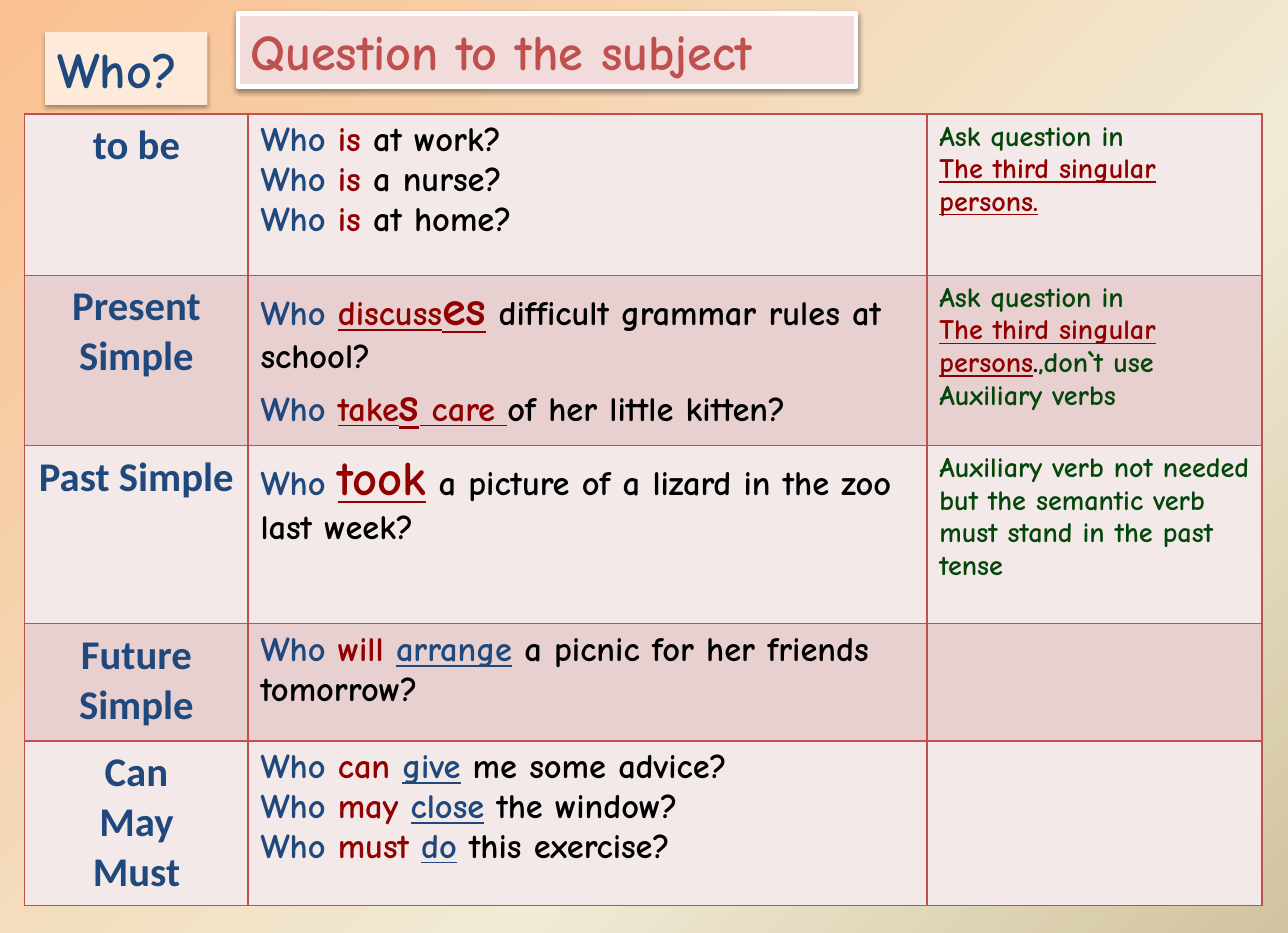
import copy
import dataclasses

import lxml.etree
import pptx
import pptx.dml.color
import pptx.enum.dml
import pptx.enum.shapes
import pptx.enum.text
import pptx.oxml.ns
import pptx.util

Inches = pptx.util.Inches
Pt = pptx.util.Pt
qn = pptx.oxml.ns.qn


@dataclasses.dataclass(frozen=True)
class Theme:
    hand: str = "Comic Neue"
    sans: str = "Calibri"
    navy: str = "1F497D"
    dark_red: str = "920000"
    green: str = "05470B"
    black: str = "000000"
    white: str = "FFFFFF"
    red: str = "C0504D"
    title_fill: str = "F2DCDB"
    who_fill: str = "FDEADA"
    bands: tuple = ("F4E9E9", "E8D0D0")
    backdrop: tuple = ((0, "FAC090"), (0.65, "F0EBD5"), (1, "D1C39F"))
    heading_size: int = 32
    ending_size: int = 31
    tense_size: int = 26
    example_size: int = 22
    note_size: int = 18


@dataclasses.dataclass(frozen=True)
class Look:
    size: int
    color: str
    font: str = Theme.hand
    underline: bool = False


THEME = Theme()
TITLE = Look(THEME.heading_size, THEME.red)
HEADING = Look(THEME.heading_size, THEME.navy)
TENSE = Look(THEME.tense_size, THEME.navy, THEME.sans)
WHO = Look(THEME.example_size, THEME.navy)
BASE_VERB = Look(THEME.example_size, THEME.navy, underline=True)
HELPER = Look(THEME.example_size, THEME.dark_red)
VERB = Look(THEME.example_size, THEME.dark_red, underline=True)
ENDING = Look(THEME.ending_size, THEME.dark_red, underline=True)
REST = Look(THEME.example_size, THEME.black)
NOTE = Look(THEME.note_size, THEME.green)
NOTE_KEY = Look(THEME.note_size, THEME.dark_red, underline=True)
NOTE_DOT = Look(THEME.note_size, THEME.black)


def rgb(value):
    return pptx.dml.color.RGBColor.from_string(value)


def ask(*spans):
    return [("Who ", WHO), *spans]


def ask_with_helper(helper, verb, rest):
    return ask((f"{helper} ", HELPER), (verb, BASE_VERB), (f" {rest}", REST))


ASK_IN = [("Ask question in", NOTE)]

# Each row: tense lines, example paragraphs, note paragraphs
ROWS = [
    (["to be"],
     [ask(("is ", HELPER), (rest, REST)) for rest in ("at work?", "a nurse?", "at home?")],
     [ASK_IN, [("The third singular persons.", NOTE_KEY)]]),
    (["Present Simple"],
     [ask(("discuss", VERB), ("es", ENDING), (" difficult grammar rules at school?", REST)),
      ask(("take", VERB), ("s", ENDING), (" care ", VERB), ("of her little kitten?", REST))],
     [ASK_IN, [("The third singular persons", NOTE_KEY), (".", NOTE_DOT),
               (",don`t use Auxiliary verbs", NOTE)]]),
    (["Past Simple"],
     [ask(("took", ENDING), (" a picture of a lizard in the zoo last week?", REST))],
     [[("Auxiliary verb not needed but the semantic verb must stand in the past tense", NOTE)]]),
    (["Future Simple"],
     [ask_with_helper("will", "arrange", "a picnic for her friends tomorrow?")],
     []),
    (["Can", "May", "Must"],
     [ask_with_helper("can", "give", "me some advice?"),
      ask_with_helper("may", "close", "the window?"),
      ask_with_helper("must", "do", "this exercise?")],
     []),
]
COLUMN_WIDTHS = (1.98, 6.02, 2.97)
ROW_HEIGHTS = (1.43, 1.51, 1.58, 1.04, 1.46)


class Sheet:
    def __init__(self, deck, theme):
        self.theme = theme
        self.page = deck.slides.add_slide(deck.slide_layouts[5])

    def backdrop(self):
        fill = self.page.background.fill
        fill.gradient()
        stops = self.page.element.find(".//" + qn("a:gsLst"))
        stops.append(copy.deepcopy(stops[-1]))
        for stop, (position, color) in zip(fill.gradient_stops, self.theme.backdrop):
            stop.position = position
            stop.color.rgb = rgb(color)
        fill.gradient_angle = 315

    def add_text(self, frame, paragraphs, align=pptx.enum.text.PP_ALIGN.LEFT):
        for number, spans in enumerate(paragraphs):
            para = frame.add_paragraph() if number else frame.paragraphs[0]
            para.alignment = align
            for text, look in spans:
                span = para.add_run()
                span.text = text
                span.font.name = look.font
                span.font.size = Pt(look.size)
                span.font.bold = True
                span.font.underline = look.underline
                span.font.color.rgb = rgb(look.color)

    def pad(self, holder):
        holder.margin_left = holder.margin_right = Inches(0.11)
        holder.margin_top = holder.margin_bottom = Inches(0.06)

    def shadow(self, box, opacity, distance):
        box.shadow.inherit = False
        effects = box.element.spPr.find(qn("a:effectLst"))
        outer = lxml.etree.SubElement(
            effects, qn("a:outerShdw"), blurRad=str(Pt(3.1)), dist=str(Pt(distance)),
            dir="5400000", algn="t", rotWithShape="0")
        color = lxml.etree.SubElement(outer, qn("a:srgbClr"), val=self.theme.black)
        lxml.etree.SubElement(color, qn("a:alpha"), val=str(opacity * 1000))

    def label(self, box, text, look, fill):
        box.fill.solid()
        box.fill.fore_color.rgb = rgb(fill)
        frame = box.text_frame
        frame.word_wrap = True
        frame.auto_size = pptx.enum.text.MSO_AUTO_SIZE.NONE
        frame.vertical_anchor = pptx.enum.text.MSO_ANCHOR.MIDDLE
        self.pad(frame)
        self.add_text(frame, [[(text, look)]])

    def title(self, text, left, top, width, height):
        box = self.page.shapes.title
        box.left, box.top = Inches(left), Inches(top)
        box.width, box.height = Inches(width), Inches(height)
        self.label(box, text, TITLE, self.theme.title_fill)
        box.line.color.rgb = rgb(self.theme.white)
        box.line.width = Pt(3)
        self.shadow(box, 38, 1.6)

    def tag(self, text, left, top, width, height):
        box = self.page.shapes.add_shape(
            pptx.enum.shapes.MSO_SHAPE.RECTANGLE,
            Inches(left), Inches(top), Inches(width), Inches(height))
        self.label(box, text, HEADING, self.theme.who_fill)
        box.line.fill.background()
        self.shadow(box, 35, 1.8)

    def borders(self, cell):
        properties = cell._tc.get_or_add_tcPr()
        for place, side in enumerate(("a:lnL", "a:lnR", "a:lnT", "a:lnB")):
            line = lxml.etree.Element(qn(side), w=str(Pt(1)))
            fill = lxml.etree.SubElement(line, qn("a:solidFill"))
            lxml.etree.SubElement(fill, qn("a:srgbClr"), val=self.theme.red)
            properties.insert(place, line)

    def table(self, rows, left, top):
        grid = self.page.shapes.add_table(
            len(rows), len(COLUMN_WIDTHS), Inches(left), Inches(top),
            Inches(sum(COLUMN_WIDTHS)), Inches(sum(ROW_HEIGHTS))).table
        grid.first_row = grid.horz_banding = False
        for column, width in zip(grid.columns, COLUMN_WIDTHS):
            column.width = Inches(width)
        for number, (tenses, examples, notes) in enumerate(rows):
            grid.rows[number].height = Inches(ROW_HEIGHTS[number])
            for cell in grid.rows[number].cells:
                self.pad(cell)
                cell.fill.solid()
                cell.fill.fore_color.rgb = rgb(self.theme.bands[number % 2])
                self.borders(cell)
            tense_cell, example_cell, note_cell = grid.rows[number].cells
            self.add_text(tense_cell.text_frame, [[(tense, TENSE)] for tense in tenses],
                          pptx.enum.text.PP_ALIGN.CENTER)
            self.add_text(example_cell.text_frame, examples)
            self.add_text(note_cell.text_frame, notes)


def main():
    deck = pptx.Presentation()
    deck.slide_width, deck.slide_height = Inches(11.42), Inches(8.27)
    sheet = Sheet(deck, THEME)
    sheet.backdrop()
    sheet.title("Question to the subject", 2.11, 0.12, 5.48, 0.65)
    sheet.table(ROWS, 0.22, 1.01)
    sheet.tag("Who?", 0.4, 0.28, 1.44, 0.65)
    deck.save("out.pptx")


if __name__ == "__main__":
    main()
